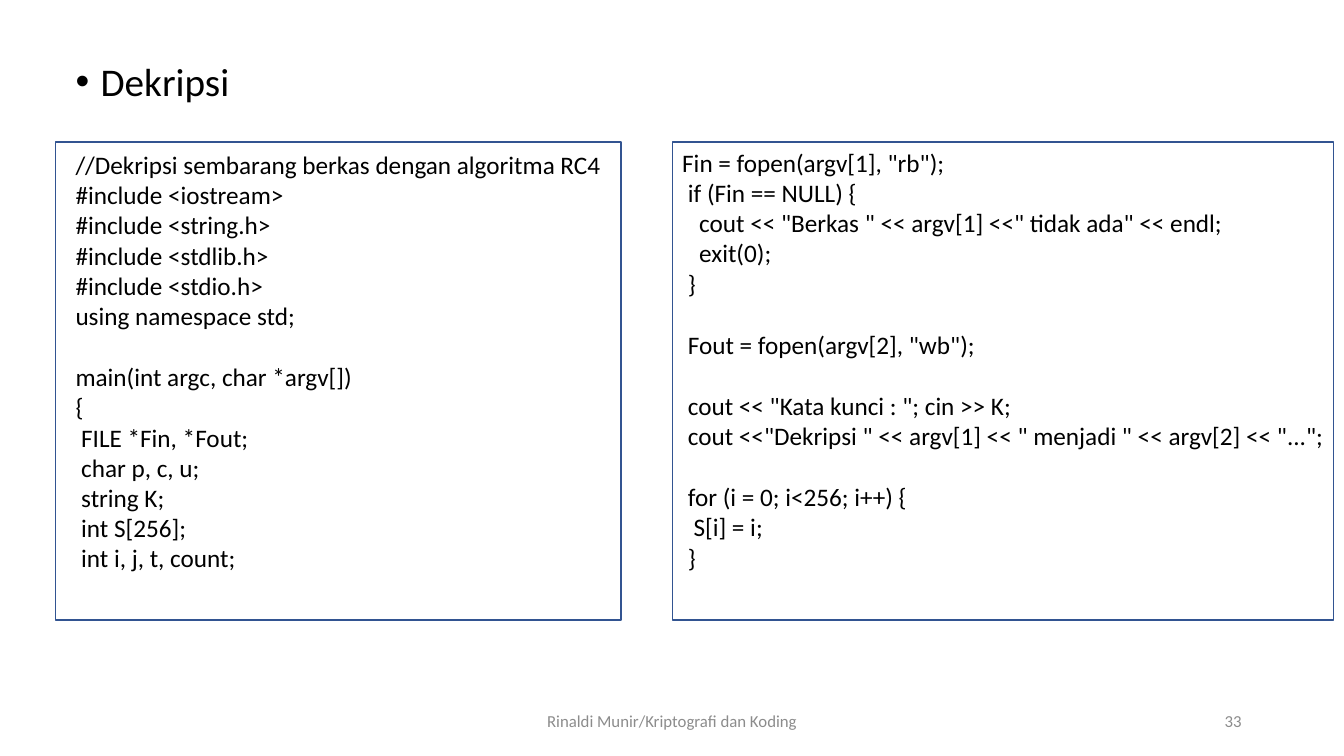
from lxml.etree import SubElement
from pptx import Presentation
from pptx.dml.color import RGBColor
from pptx.enum.shapes import MSO_SHAPE
from pptx.enum.text import MSO_ANCHOR, PP_ALIGN
from pptx.oxml.ns import qn
from pptx.util import Inches, Pt

SLIDE_WIDTH, SLIDE_HEIGHT = Inches(13.33), Inches(7.5)
COLUMN, ROW = SLIDE_WIDTH / 100, SLIDE_HEIGHT / 100
FONT = "Calibri"
BLACK = RGBColor(0x00, 0x00, 0x00)
GREY = RGBColor(0x8C, 0x8C, 0x8C)
BLUE = RGBColor(0x32, 0x54, 0x91)
CODE_SIZE = 18
CODE_LINE = 22
FRAME_TOP, FRAME_HEIGHT = 18.8, 63.2
FOOTER_TOP, FOOTER_HEIGHT = 92.67, 5.33

SETUP_CODE = """//Dekripsi sembarang berkas dengan algoritma RC4
#include <iostream>
#include <string.h>
#include <stdlib.h>
#include <stdio.h>
using namespace std;

main(int argc, char *argv[])
{
 FILE *Fin, *Fout;
 char p, c, u;
 string K;
 int S[256];
 int i, j, t, count;"""

FILE_CODE = """Fin = fopen(argv[1], "rb");
 if (Fin == NULL) {
   cout << "Berkas " << argv[1] <<" tidak ada" << endl;
   exit(0);
 }

 Fout = fopen(argv[2], "wb");

 cout << "Kata kunci : "; cin >> K;
 cout <<"Dekripsi " << argv[1] << " menjadi " << argv[2] << "...";

 for (i = 0; i<256; i++) {
  S[i] = i;
 }"""


def place(left, top, width, height):
    """Turn grid columns and rows into slide lengths."""
    return [round(length) for length in
            (left * COLUMN, top * ROW, width * COLUMN, height * ROW)]


def add_bullet(para, indent):
    """Give a paragraph a hanging round bullet."""
    properties = para._p.get_or_add_pPr()
    properties.set("marL", str(indent))
    properties.set("indent", str(-indent))
    SubElement(properties, qn("a:buFont"), typeface="Arial")
    SubElement(properties, qn("a:buChar"), char="•")


def add_text(page, text, area, size=CODE_SIZE, color=BLACK, align=PP_ALIGN.LEFT,
             anchor=MSO_ANCHOR.TOP, wrap=True, bullet=False, line_spacing=None):
    """Add a text box whose blank-line breaks become paragraph spacing."""
    frame = page.shapes.add_textbox(*place(*area)).text_frame
    frame.word_wrap = wrap
    frame.vertical_anchor = anchor
    para = frame.paragraphs[0]
    for block_index, block in enumerate(text.split("\n\n")):
        for line_index, line in enumerate(block.split("\n")):
            if block_index or line_index:
                para = frame.add_paragraph()
            if block_index and not line_index:
                para.space_before = Pt(CODE_LINE)
            para.alignment = align
            if line_spacing:
                para.line_spacing = line_spacing
            if bullet:
                add_bullet(para, Inches(0.25))
            span = para.add_run()
            span.text = line
            span.font.name = FONT
            span.font.size = Pt(size)
            span.font.color.rgb = color


def add_code_panel(page, code, text_left, text_top, frame_left, frame_width):
    """Add a code listing and the blue frame around it."""
    add_text(page, code, (text_left, text_top, 50, FRAME_HEIGHT), wrap=False)
    box = page.shapes.add_shape(
        MSO_SHAPE.RECTANGLE,
        *place(frame_left, FRAME_TOP, frame_width, FRAME_HEIGHT))
    box.shadow.inherit = False
    box.fill.background()
    box.line.color.rgb = BLUE
    box.line.width = Pt(1)


def add_footer(page, text, left, width, align):
    """Add one grey text in the footer row."""
    add_text(page, text, (left, FOOTER_TOP, width, FOOTER_HEIGHT), size=12,
             color=GREY, align=align, anchor=MSO_ANCHOR.MIDDLE)


def main():
    """Build the decryption slide and save it."""
    deck = Presentation()
    deck.slide_width, deck.slide_height = SLIDE_WIDTH, SLIDE_HEIGHT
    page = deck.slides.add_slide(deck.slide_layouts[6])
    add_text(page, "Dekripsi", (4.88, 7.6, 86.25, 9), size=28, bullet=True,
             line_spacing=0.9)
    add_footer(page, "Rinaldi Munir/Kriptografi dan Koding", 33.13, 33.75,
               PP_ALIGN.CENTER)
    add_footer(page, "33", 70.63, 22.5, PP_ALIGN.RIGHT)
    add_code_panel(page, SETUP_CODE, 4.88, 19.07, 4.13, 42.08)
    add_code_panel(page, FILE_CODE, 50.02, FRAME_TOP, 50.02, 49.2)
    deck.save("out.pptx")


if __name__ == "__main__":
    main()
